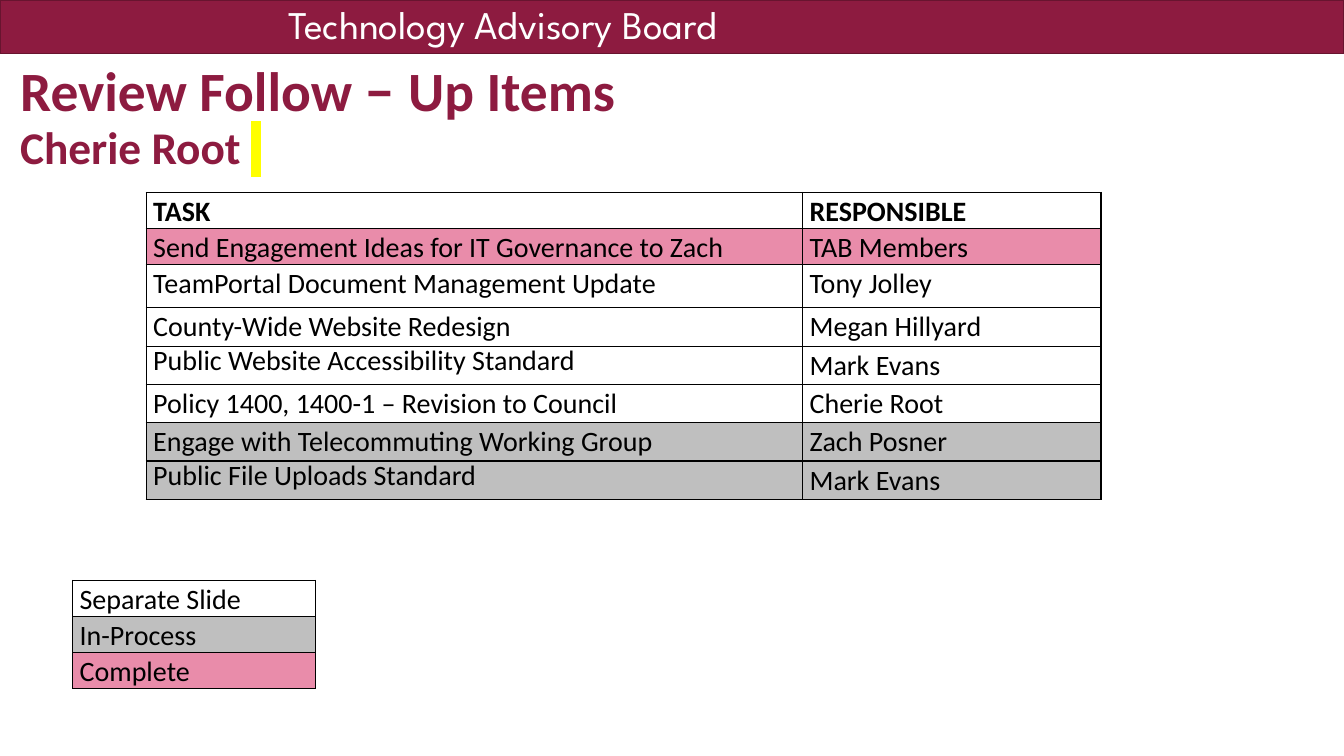
from lxml.etree import SubElement
from pptx import Presentation
from pptx.dml.color import RGBColor
from pptx.enum.shapes import MSO_SHAPE as Preset
from pptx.enum.text import MSO_AUTO_SIZE as AutoSize
from pptx.oxml import parse_xml
from pptx.oxml.ns import nsdecls, qn
from pptx.util import Inches, Pt

COLORS = {"maroon": "8D1B40", "edge": "68142F", "white": "FFFFFF", "black": "000000",
          "done": "E98CAA", "active": "BFBFBF", "marker": "FFFF00"}

TASKS = [
    ("TASK", "RESPONSIBLE", None, 0.34),
    ("Send Engagement Ideas for IT Governance to Zach", "TAB Members", "done", 0.34),
    ("TeamPortal Document Management Update", "Tony Jolley", None, 0.43),
    ("County-Wide Website Redesign", "Megan Hillyard", "white", 0.38),
    ("Public Website Accessibility Standard", "Mark Evans", None, 0.38),
    ("Policy 1400, 1400-1 – Revision to Council", "Cherie Root", None, 0.38),
    ("Engage with Telecommuting Working Group", "Zach Posner", "active", 0.38),
    ("Public File Uploads Standard", "Mark Evans", "active", 0.38),
]
TIGHT_TASKS = {"Public Website Accessibility Standard", "Public File Uploads Standard"}
LEGEND = [("Separate Slide", "white", 0.34), ("In-Process", "active", 0.34),
          ("Complete", "done", 0.34)]


def rgb(name):
    """Return the palette colour with this name."""
    return RGBColor.from_string(COLORS[name])


def style_font(font, face, color, size=None, bold=False):
    """Set the face, colour, size and weight of a font."""
    font.name = face
    font.color.rgb = rgb(color)
    font.bold = bold
    if size:
        font.size = Pt(size)


def add_banner(slide):
    """Draw the maroon band with the board's name."""
    band = slide.shapes.add_shape(Preset.RECTANGLE, 0, 0, Inches(13.33), Inches(0.53))
    band.shadow.inherit = False
    band.fill.solid()
    band.fill.fore_color.rgb = rgb("maroon")
    band.line.color.rgb = rgb("edge")
    band.line.width = Pt(1)
    board = slide.shapes.add_textbox(Inches(2.76), Inches(-0.05), Inches(5.38), Inches(0.57))
    board.text_frame.word_wrap = False
    board.text_frame.auto_size = AutoSize.SHAPE_TO_FIT_TEXT
    name = board.text_frame.paragraphs[0]
    name.text = "Technology Advisory Board"
    style_font(name.font, "League Spartan", "white", 28)


def add_heading(slide):
    """Write the heading, the presenter and the highlighted mark after it."""
    box = slide.shapes.add_textbox(Inches(0.2), Inches(0.58), Inches(12), Inches(0.75))
    frame = box.text_frame
    frame.word_wrap = True
    frame.margin_left = frame.margin_right = frame.margin_top = frame.margin_bottom = 0
    heading = frame.paragraphs[0]
    heading.line_spacing = 0.9
    style_font(heading.font, "Calibri", "maroon", bold=True)
    for text, size in [("Review Follow ", 39.6), ("–", 44.1), (" Up Items", 39.6),
                       (None, None), ("Cherie Root ", 32.4), (" ", 32.4)]:
        if text is None:
            heading.add_line_break()
            continue
        run = heading.add_run()
        run.text = text
        run.font.size = Pt(size)
    highlight = SubElement(run.font._element, qn("a:highlight"))
    SubElement(highlight, qn("a:srgbClr"), val=COLORS["marker"])


def add_borders(cell):
    """Put a thin black line on every side of a cell."""
    properties = cell._tc.get_or_add_tcPr()
    for position, side in enumerate(("lnL", "lnR", "lnT", "lnB")):
        properties.insert(position, parse_xml(
            f'<a:{side} {nsdecls("a")} w="12700"><a:solidFill>'
            f'<a:srgbClr val="{COLORS["black"]}"/></a:solidFill></a:{side}>'))


def fill_cell(cell, text, fill, bold):
    """Write one table cell with its fill and borders."""
    cell.margin_left = cell.margin_right = Inches(0.07)
    cell.margin_top = cell.margin_bottom = 0
    if fill:
        cell.fill.solid()
        cell.fill.fore_color.rgb = rgb(fill)
    else:
        cell.fill.background()
    add_borders(cell)
    entry = cell.text_frame.paragraphs[0]
    entry.text = text
    entry.line_spacing = 0.9 if text in TIGHT_TASKS else 1.07
    style_font(entry.font, "Calibri", "black", 20, bold)


def add_grid(slide, left, top, widths, rows, header=False):
    """Build a table from rows of texts followed by a fill and a height."""
    height = sum(row[-1] for row in rows)
    grid = slide.shapes.add_table(len(rows), len(widths), Inches(left), Inches(top),
                                  Inches(sum(widths)), Inches(height)).table
    grid.first_row = grid.horz_banding = False
    for column, width in zip(grid.columns, widths):
        column.width = Inches(width)
    for index, (*texts, fill, row_height) in enumerate(rows):
        grid.rows[index].height = Inches(row_height)
        for column, text in enumerate(texts):
            fill_cell(grid.cell(index, column), text, fill, header and index == 0)


def main():
    """Build the follow-up items slide."""
    deck = Presentation()
    deck.slide_width, deck.slide_height = Inches(13.33), Inches(7.5)
    slide = deck.slides.add_slide(deck.slide_layouts[6])
    add_banner(slide)
    add_heading(slide)
    add_grid(slide, 1.45, 1.91, [6.51, 2.96], TASKS, header=True)
    add_grid(slide, 0.72, 5.76, [2.41], LEGEND)
    deck.save("out.pptx")


if __name__ == "__main__":
    main()
